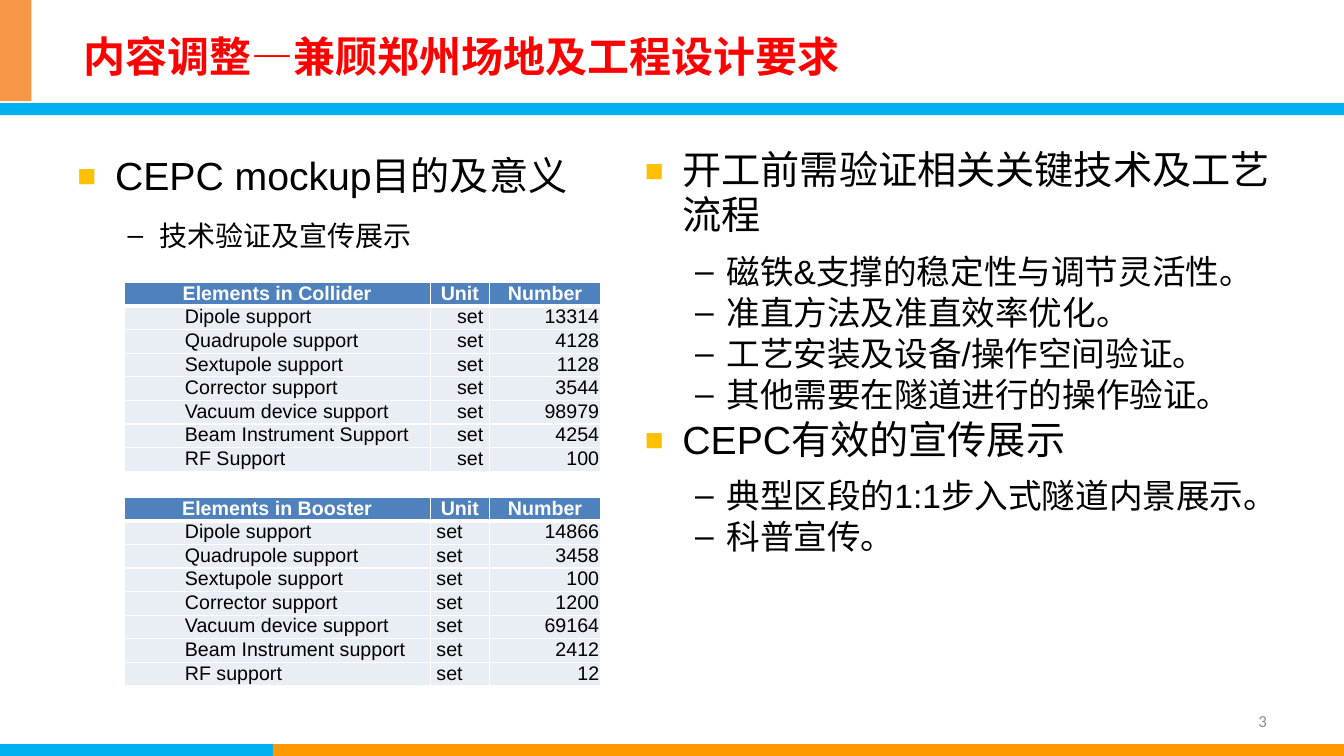
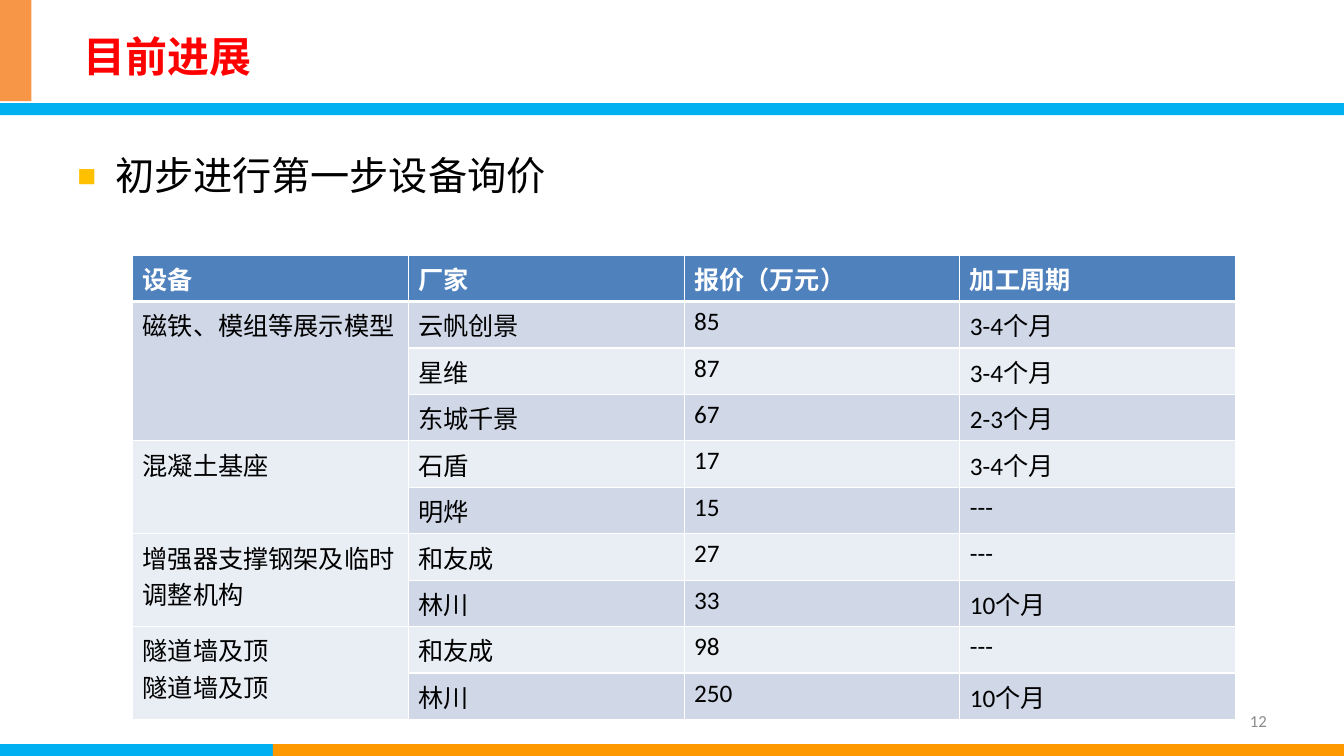
from lxml import etree
from pptx import Presentation
from pptx.dml.color import RGBColor
from pptx.enum.shapes import MSO_SHAPE
from pptx.enum.text import MSO_ANCHOR as Anchor, PP_ALIGN as Align
from pptx.oxml.ns import qn
from pptx.util import Cm, Pt

WIDTH, HEIGHT = 33.87, 19.05
WHITE, BLACK, RED, GREY = "FFFFFF", "000000", "FF0000", "8C8C8C"
SKY, ORANGE, PEACH, GOLD = "00B0F0", "FF9900", "F79646", "FFC000"
HEAD_BLUE, DARK_BAND, PALE_BAND = "4F81BD", "D0D8E8", "E9EDF4"
BANDS = [
    (0, 18.75, WIDTH, 0.3, SKY),
    (6.88, 18.75, WIDTH - 6.88, 0.3, ORANGE),
    (0, 2.6, WIDTH, 0.3, SKY),
    (0, 0, 0.79, 2.55, PEACH),
]
TITLE_BOX = (1.85, 0.41, 29.9, 2)
NUMBER_BOX = (24.28, 17.65, 7.9, 1.02)

COLLIDER = [
    ("Elements in Collider", "Unit", "Number"),
    ("Dipole support", "set", "13314"),
    ("Quadrupole support", "set", "4128"),
    ("Sextupole support", "set", "1128"),
    ("Corrector support", "set", "3544"),
    ("Vacuum device support", "set", "98979"),
    ("Beam Instrument Support", "set", "4254"),
    ("RF Support", "set", "100"),
]
BOOSTER = [
    ("Elements in Booster", "Unit", "Number"),
    ("Dipole support", "set", "14866"),
    ("Quadrupole support", "set", "3458"),
    ("Sextupole support", "set", "100"),
    ("Corrector support", "set", "1200"),
    ("Vacuum device support", "set", "69164"),
    ("Beam Instrument support", "set", "2412"),
    ("RF support", "set", "12"),
]
QUOTE_HEAD = ("设备", "厂家", "报价（万元）", "加工周期")
QUOTES = [
    ("磁铁、模组等展示模型", [("云帆创景", "85", "3-4个月"),
                    ("星维", "87", "3-4个月"),
                    ("东城千景", "67", "2-3个月")]),
    ("混凝土基座", [("石盾", "17", "3-4个月"),
               ("明烨", "15", "---")]),
    ("增强器支撑钢架及临时调整机构", [("和友成", "27", "---"),
                        ("林川", "33", "10个月")]),
    ("隧道墙及顶\n隧道墙及顶", [("和友成", "98", "---"),
                      ("林川", "250", "10个月")]),
]


def color(value):
    return RGBColor.from_string(value)


def cm_box(box):
    return [Cm(length) for length in box]


def style(para, size, name, ink, bold=False, align=Align.LEFT):
    para.alignment = align
    font = para.font
    font.size, font.name, font.bold = Pt(size), name, bold
    font.color.rgb = color(ink)


def add_band(page, box, fill):
    band = page.shapes.add_shape(MSO_SHAPE.RECTANGLE, *cm_box(box))
    band.shadow.inherit = False
    band.fill.solid()
    band.fill.fore_color.rgb = color(fill)
    band.line.fill.background()


def add_page(deck, title, number):
    """Add a slide with the shared bands, title and page number."""
    page = deck.slides.add_slide(deck.slide_layouts[5])
    for *box, fill in BANDS:
        add_band(page, box, fill)

    heading = page.shapes.title
    heading.left, heading.top, heading.width, heading.height = cm_box(TITLE_BOX)
    heading.text_frame.text = title
    heading.text_frame.vertical_anchor = Anchor.MIDDLE
    style(heading.text_frame.paragraphs[0], 30, "Montserrat", RED, True)

    frame = page.shapes.add_textbox(*cm_box(NUMBER_BOX)).text_frame
    frame.word_wrap = True
    frame.vertical_anchor = Anchor.MIDDLE
    frame.text = number
    style(frame.paragraphs[0], 12, "Calibri", GREY, align=Align.RIGHT)
    return page


def set_bullet(para, mark, left, hanging, ink=None, percent=None):
    props = para._p.get_or_add_pPr()
    props.set("marL", str(Cm(left)))
    props.set("indent", str(-Cm(hanging)))
    if ink:
        holder = etree.SubElement(props, qn("a:buClr"))
        etree.SubElement(holder, qn("a:srgbClr"), val=ink)
    if percent:
        etree.SubElement(props, qn("a:buSzPct"), val=str(percent * 1000))
    etree.SubElement(props, qn("a:buFont"), typeface="Arial")
    etree.SubElement(props, qn("a:buChar"), char=mark)


def add_outline(page, box, sections, detail_size=24,
                heading_spacing=1.1, detail_spacing=1.0, heading_gap=10):
    """Place headings, each with its dashed details, in one text box."""
    frame = page.shapes.add_textbox(*cm_box(box)).text_frame
    frame.word_wrap = True
    lines = [(text, level) for heading, details in sections
             for text, level in [(heading, 0)] + [(item, 1) for item in details]]
    for index, (text, level) in enumerate(lines):
        para = frame.paragraphs[0] if index == 0 else frame.add_paragraph()
        para.text = text
        if level:
            para.level = 1
            set_bullet(para, "–", 2.06, 0.79)
            para.line_spacing = detail_spacing
            para.space_before = Pt(4)
        else:
            set_bullet(para, "■", 0.95, 0.95, GOLD, 80)
            para.line_spacing = heading_spacing
            para.space_before = Pt(2.5 if index else 0)
            para.space_after = Pt(heading_gap)
        style(para, detail_size if level else 28, "Arial", BLACK)


def set_borders(cell, bottom):
    props = cell._tc.get_or_add_tcPr()
    for side, width in (("L", 1), ("R", 1), ("T", 1), ("B", bottom)):
        line = etree.SubElement(props, qn("a:ln" + side), w=str(Pt(width)))
        fill = etree.SubElement(line, qn("a:solidFill"))
        etree.SubElement(fill, qn("a:srgbClr"), val=WHITE)


def fill_cell(cell, text, fill, size, name, is_head, align):
    cell.text = text
    set_borders(cell, 3 if is_head else 1)
    cell.fill.solid()
    cell.fill.fore_color.rgb = color(fill)
    for para in cell.text_frame.paragraphs:
        style(para, size, name, WHITE if is_head else BLACK, is_head, align)


def add_grid(page, left, top, widths, row_height, row_count):
    frame = page.shapes.add_table(row_count, len(widths), Cm(left), Cm(top),
                                  Cm(sum(widths)), Cm(row_height * row_count))
    grid = frame.table
    grid.horz_banding = False
    for column, width in zip(grid.columns, widths):
        column.width = Cm(width)
    for row in grid.rows:
        row.height = Cm(row_height)
    return grid


def add_support_table(page, left, top, rows, unit_align):
    grid = add_grid(page, left, top, (7.71, 1.5, 2.79), 0.58, len(rows))
    aligns = (Align.LEFT, unit_align, Align.RIGHT)
    indents = (1.53, 0.16, 0.03)
    for r, row in enumerate(rows):
        is_head = r == 0
        for c, text in enumerate(row):
            cell = grid.cell(r, c)
            fill_cell(cell, text, HEAD_BLUE if is_head else PALE_BAND, 14, "Arial",
                      is_head, Align.CENTER if is_head else aligns[c])
            cell.margin_left = cell.margin_right = Cm(0.03)
            cell.margin_top = cell.margin_bottom = 0
            if not is_head and aligns[c] == Align.LEFT:
                cell.margin_left = Cm(indents[c])
            elif not is_head:
                cell.margin_right = Cm(indents[c])


def add_quote_table(page, left, top):
    rows = [QUOTE_HEAD] + [
        (device if index == 0 else "", *offer)
        for device, offers in QUOTES for index, offer in enumerate(offers)]
    grid = add_grid(page, left, top, (6.95,) * 4, 1.17, len(rows))
    for r, row in enumerate(rows):
        fill = HEAD_BLUE if r == 0 else DARK_BAND if r % 2 else PALE_BAND
        for c, text in enumerate(row):
            fill_cell(grid.cell(r, c), text, fill, 18, "Calibri", r == 0, Align.LEFT)
    first = 1
    for _, offers in QUOTES:
        last = first + len(offers) - 1
        grid.cell(first, 0).merge(grid.cell(last, 0))
        first = last + 1


def build_scope_page(deck):
    page = add_page(deck, "内容调整—兼顾郑州场地及工程设计要求", "3")
    add_outline(page, (1.7, 3.58, 14, 3.3),
                [("CEPC mockup目的及意义", ["技术验证及宣传展示"])], 20)
    add_support_table(page, 3.13, 7.12, COLLIDER, Align.RIGHT)
    add_support_table(page, 3.13, 12.53, BOOSTER, Align.LEFT)
    add_outline(page, (16, 3.62, 16.46, 13.44), [
        ("开工前需验证相关关键技术及工艺流程", [
            "磁铁&支撑的稳定性与调节灵活性。",
            "准直方法及准直效率优化。",
            "工艺安装及设备/操作空间验证。",
            "其他需要在隧道进行的操作验证。"]),
        ("CEPC有效的宣传展示", [
            "典型区段的1:1步入式隧道内景展示。",
            "科普宣传。"]),
    ], heading_spacing=0.96, detail_spacing=0.88, heading_gap=8)


def build_progress_page(deck):
    page = add_page(deck, "目前进展", "12")
    add_outline(page, (1.7, 3.58, 30.48, 2), [("初步进行第一步设备询价", [])])
    add_quote_table(page, 3.34, 6.43)


def main():
    deck = Presentation()
    deck.slide_width, deck.slide_height = Cm(WIDTH), Cm(HEIGHT)
    build_scope_page(deck)
    build_progress_page(deck)
    deck.save("out.pptx")


if __name__ == "__main__":
    main()
